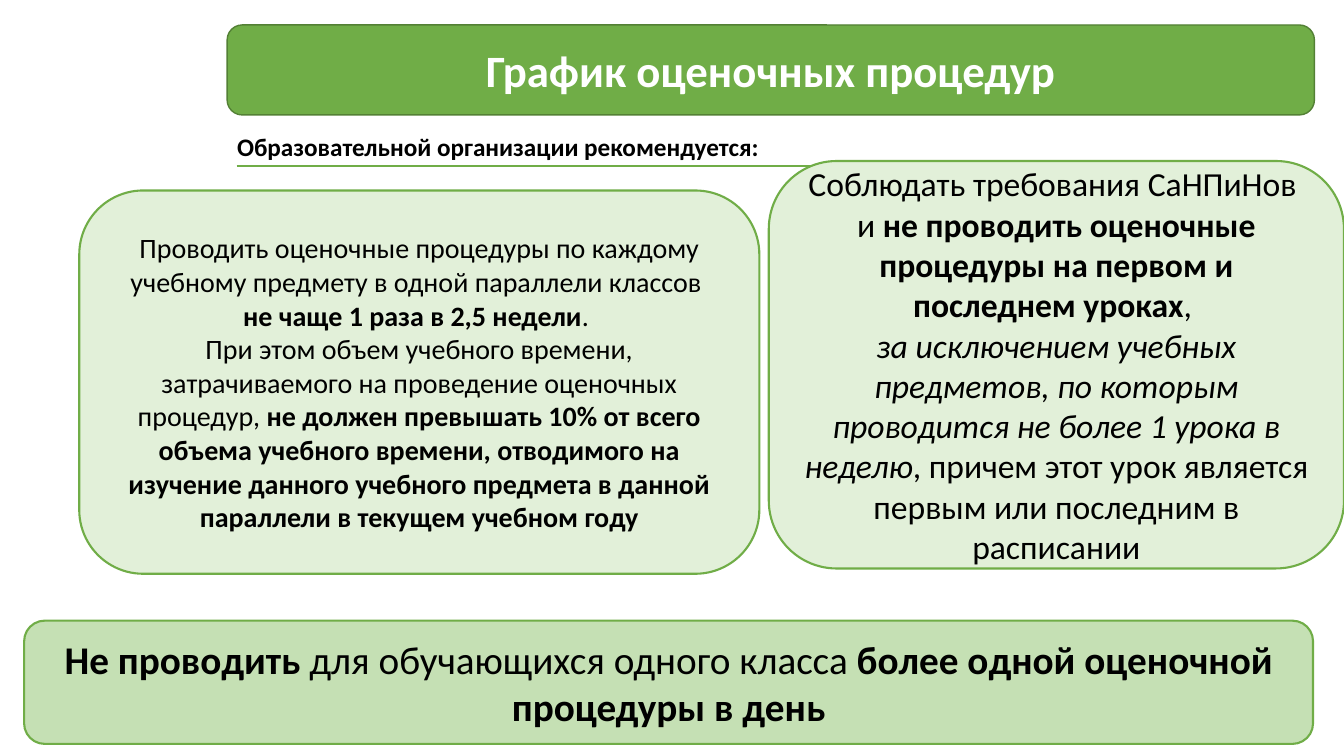
from pptx import Presentation, util as u
from pptx.dml.color import RGBColor
from pptx.enum import shapes as s, text as t
from pptx.oxml.ns import qn
from lxml import etree

GREEN, DARK, PALE, SOFT = "70AD47", "538035", "E2F0D9", "C5E0B4"
BLACK, WHITE = "000000", "FFFFFF"

deck = Presentation()
deck.slide_width, deck.slide_height = u.Inches(13.33), u.Inches(7.5)
col, row = deck.slide_width / 100, deck.slide_height / 100
slide = deck.slides.add_slide(deck.slide_layouts[5])
items = slide.shapes


def hue(code):
    return RGBColor.from_string(code)


def write(shape, paras, size, ink, align):
    frame = shape.text_frame
    look = {"word_wrap": True, "auto_size": t.MSO_AUTO_SIZE.NONE,
            "vertical_anchor": t.MSO_ANCHOR.MIDDLE}
    for key, val in look.items():
        setattr(frame, key, val)
    for n, runs in enumerate(paras):
        para = frame.add_paragraph() if n else frame.paragraphs[0]
        para.alignment = align
        for words, style in runs:
            for k, part in enumerate(words.split("\n")):
                if k:
                    para.add_line_break()
                if not part:
                    continue
                run = para.add_run()
                run.text = part
                form = {"name": "Calibri", "size": u.Pt(size),
                        "bold": style == "b", "italic": style == "i"}
                for key, val in form.items():
                    setattr(run.font, key, val)
                run.font.color.rgb = hue(ink)


center, left = t.PP_ALIGN.CENTER, t.PP_ALIGN.LEFT

head = [[("График оценочных процедур", "b")]]
lead = [[("Образовательной организации рекомендуется:", "b")]]
often = [
    [("Проводить оценочные процедуры по каждому учебному предмету "
      "в одной параллели классов \n", ""),
     ("не чаще 1 раза в 2,5 недели", "b"), (". ", "")],
    [("При этом объем учебного времени, затрачиваемого на проведение "
      "оценочных процедур, ", ""),
     ("не должен превышать 10% от всего объема учебного времени, "
      "отводимого на изучение данного учебного предмета в данной "
      "параллели в текущем учебном году", "b")],
]
rules = [[
    ("Соблюдать требования СаНПиНов \nи ", ""),
    ("не проводить оценочные процедуры на первом и последнем уроках", "b"),
    (", \n", ""),
    ("за исключением учебных предметов, по которым проводится "
     "не более 1 урока в неделю", "i"),
    (", причем этот урок является первым или последним в расписании", ""),
]]
limit = [[
    ("Не проводить", "b"), (" для обучающихся одного класса ", ""),
    ("более одной оценочной процедуры в день", "b"),
]]

label = items.add_textbox(*map(int, (16.9 * col, 16.7 * row, 46.3 * col, 5.3 * row)))
write(label, lead, 18, BLACK, left)

rule = items.add_connector(s.MSO_CONNECTOR.STRAIGHT, *map(
    int, (17.6 * col, 22 * row, 61.8 * col, 22 * row)))
rule.line.color.rgb = hue(GREEN)
rule.line.width = u.Pt(1.5)
etree.SubElement(rule._element.spPr, qn("a:effectLst"))

boxes = [
    (16.9, 3.3, 80.9, 11.9, GREEN, DARK, 1, [], 32),
    (5.9, 25.2, 50.6, 50.7, PALE, GREEN, 1.5, often, 20),
    (57.2, 21.3, 42.8, 53.9, PALE, GREEN, 1.5, rules, 24),
    (1.8, 82.1, 95.9, 16.3, SOFT, GREEN, 1.5, limit, 28),
]
for x, y, wide, high, fill, edge, thick, paras, size in boxes:
    box = items.add_shape(s.MSO_SHAPE.ROUNDED_RECTANGLE, *map(
        int, (x * col, y * row, wide * col, high * row)))
    box.shadow.inherit = False
    box.fill.solid()
    box.fill.fore_color.rgb = hue(fill)
    box.line.color.rgb = hue(edge)
    box.line.width = u.Pt(thick)
    write(box, paras, size, BLACK, center)

title = items.title
spot = {"left": 16.9 * col, "top": 3.3 * row, "width": 80.9 * col, "height": 11.9 * row}
for key, val in spot.items():
    setattr(title, key, int(val))
write(title, head, 32, WHITE, center)
items._spTree.append(title._element)

deck.save("out.pptx")
